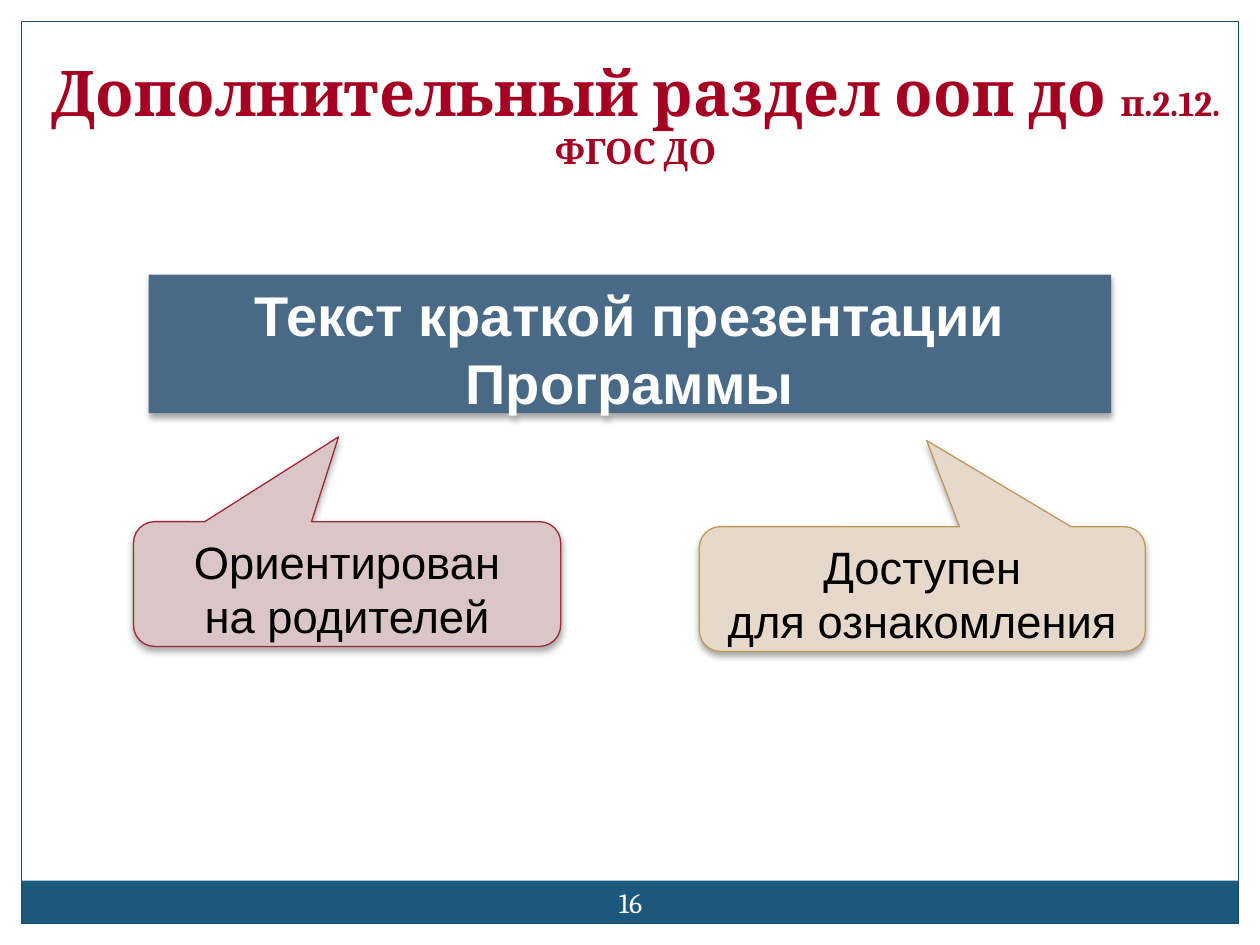
"""Build the slide on the additional section of the preschool programme."""
from lxml import etree
from pptx import Presentation
from pptx.dml.color import RGBColor
from pptx.enum.shapes import MSO_SHAPE
from pptx.enum.text import MSO_ANCHOR, MSO_AUTO_SIZE, PP_ALIGN
from pptx.oxml.ns import qn
from pptx.util import Inches, Pt

RECTANGLE = MSO_SHAPE.RECTANGLE
CALLOUT = MSO_SHAPE.ROUNDED_RECTANGULAR_CALLOUT
CENTER = PP_ALIGN.CENTER
TOP, MIDDLE, BOTTOM = MSO_ANCHOR.TOP, MSO_ANCHOR.MIDDLE, MSO_ANCHOR.BOTTOM
NO_FIT = MSO_AUTO_SIZE.NONE

WIDTH, HEIGHT = 10, 7.5
MARGIN = 0.17
FOOTER_HEIGHT = 0.34

WHITE = RGBColor(0xFF, 0xFF, 0xFF)
BLACK = RGBColor(0x00, 0x00, 0x00)
CRIMSON = RGBColor(0xA5, 0x00, 0x21)
FOOTER_BLUE = RGBColor(0x1B, 0x58, 0x7C)
FRAME_BLUE = RGBColor(0x18, 0x4E, 0x6D)
BANNER_BLUE = RGBColor(0x49, 0x6A, 0x87)
PINK = RGBColor(0xDB, 0xC6, 0xC7)
RED = RGBColor(0x9F, 0x29, 0x36)
SAND = RGBColor(0xE6, 0xD9, 0xCB)
OCHRE = RGBColor(0xC1, 0x98, 0x59)

CALLOUTS = [
    ((1.06, 4.14, 3.39, 0.99), (-0.02, -1.18, 0.17), PINK, RED,
     "Ориентирован\nна родителей"),
    ((5.55, 4.18, 3.54, 0.99), (0.01, -1.19, 0.17), SAND, OCHRE,
     "Доступен\nдля ознакомления"),
]


def style_run(run, font_name, size, color, bold=False):
    """Set the font of one run."""
    run.font.name = font_name
    run.font.size = Pt(size)
    run.font.color.rgb = color
    run.font.bold = bold


def write_text(shape, text, anchor, *font):
    """Fill a shape with centred text in one font."""
    frame = shape.text_frame
    frame.text = text
    frame.word_wrap = False
    frame.vertical_anchor = anchor
    for paragraph in frame.paragraphs:
        paragraph.alignment = CENTER
        for run in paragraph.runs:
            style_run(run, *font)


def add_panel(slide, kind, box, fill=None, line=None):
    """Add a flat shape with an optional fill and outline."""
    panel = slide.shapes.add_shape(kind, *map(Inches, box))
    panel.shadow.inherit = False
    if fill is None:
        panel.fill.background()
    else:
        panel.fill.solid()
        panel.fill.fore_color.rgb = fill
    if line is None:
        panel.line.fill.background()
    else:
        panel.line.color.rgb = line
        panel.line.width = Pt(0.75)
    return panel


def add_shadow(shape, opacity, blur, distance):
    """Give a shape a soft black shadow that falls downwards."""
    effects = shape.element.spPr.find(qn("a:effectLst"))
    shadow = etree.SubElement(
        effects, qn("a:outerShdw"), blurRad=str(Pt(blur)),
        dist=str(Pt(distance)), dir="5400000", rotWithShape="0")
    color = etree.SubElement(shadow, qn("a:srgbClr"), val=str(BLACK))
    etree.SubElement(color, qn("a:alpha"), val=str(opacity * 1000))


def add_frame(slide):
    """Add the footer band, the slide border and the page number."""
    inner_width = WIDTH - 2 * MARGIN
    footer_top = HEIGHT - MARGIN - FOOTER_HEIGHT
    add_panel(slide, RECTANGLE, (MARGIN, footer_top, inner_width, FOOTER_HEIGHT),
              FOOTER_BLUE)
    add_panel(slide, RECTANGLE,
              (MARGIN, MARGIN, inner_width, HEIGHT - 2 * MARGIN), line=FRAME_BLUE)
    page_number = slide.shapes.add_textbox(*map(Inches, (4.67, 6.92, 0.67, 0.48)))
    write_text(page_number, "16", MIDDLE, "Cambria", 16, WHITE)
    page_number.text_frame.word_wrap = True
    page_number.text_frame.margin_left = Inches(0.05)
    page_number.text_frame.margin_right = Inches(0.05)


def set_title(slide):
    """Place the title and set its large and small parts."""
    title = slide.shapes.title
    title.left, title.top, title.width, title.height = map(
        Inches, (0.28, 0.25, 9.53, 1.16))
    frame = title.text_frame
    frame.auto_size = NO_FIT
    frame.word_wrap = True
    frame.vertical_anchor = BOTTOM
    heading = frame.paragraphs[0]
    heading.alignment = CENTER
    for text, size in (("Дополнительный раздел ооп до ", 36),
                       ("п.2.12. ФГОС ДО", 20)):
        run = heading.add_run()
        run.text = text
        style_run(run, "Cambria", size, CRIMSON, True)


def add_banner(slide):
    """Add the central banner."""
    banner = add_panel(slide, RECTANGLE, (1.18, 2.18, 7.64, 1.1), BANNER_BLUE)
    add_shadow(banner, 32, 3.5, 2.2)
    write_text(banner, "Текст краткой презентации\vПрограммы", TOP,
               "Arial", 32, WHITE, True)


def add_callout(slide, box, adjustments, fill, line, text):
    """Add a callout that points up to the banner."""
    callout = add_panel(slide, CALLOUT, box, fill, line)
    for index, value in enumerate(adjustments):
        callout.adjustments[index] = value
    add_shadow(callout, 35, 4, 2)
    write_text(callout, text, TOP, "Arial", 25.9, BLACK)


def main():
    """Build and save the slide."""
    deck = Presentation()
    deck.slide_width, deck.slide_height = Inches(WIDTH), Inches(HEIGHT)
    slide = deck.slides.add_slide(deck.slide_layouts[5])
    add_frame(slide)
    set_title(slide)
    add_banner(slide)
    for callout in CALLOUTS:
        add_callout(slide, *callout)
    deck.save("out.pptx")


if __name__ == "__main__":
    main()
